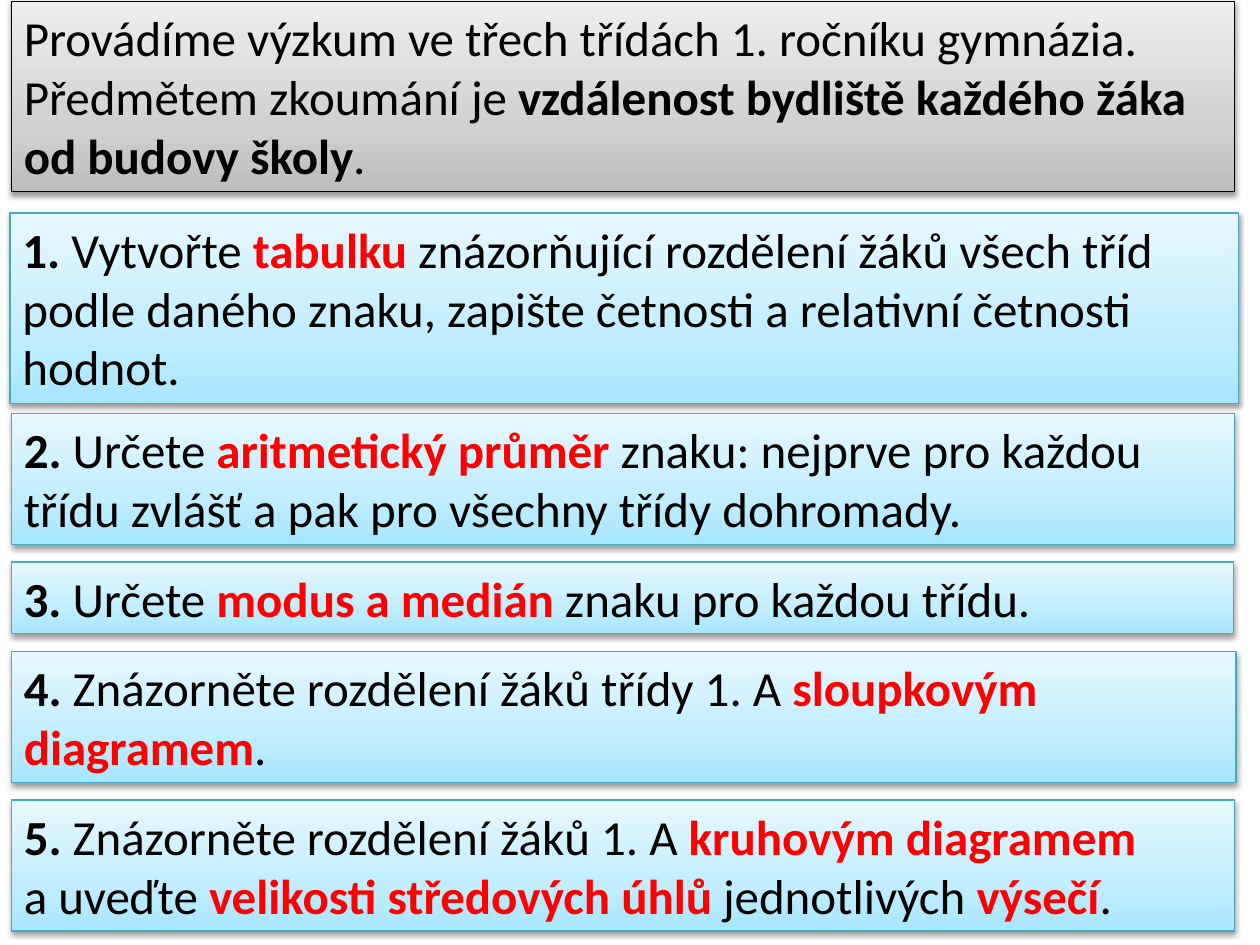
from dataclasses import dataclass

from lxml import etree
from pptx import Presentation
from pptx.dml.color import RGBColor
from pptx.enum.shapes import MSO_SHAPE
from pptx.enum.text import MSO_ANCHOR, MSO_AUTO_SIZE, PP_ALIGN
from pptx.oxml.ns import qn
from pptx.util import Inches, Pt

RECT = MSO_SHAPE.RECTANGLE
TOP = MSO_ANCHOR.TOP
LEFT = PP_ALIGN.LEFT
GROW = MSO_AUTO_SIZE.SHAPE_TO_FIT_TEXT

COLORS = {"text": "000000", "key": "FF0000", "gray_line": "000000",
          "blue_line": "46AAC5", "shadow": "000000"}
GRADIENTS = {
    "gray": {0: "BDBDBD", 35: "D1D1D1", 100: "EEEEEE"},
    "blue": {0: "A7E6FF", 35: "C1EDFF", 100: "E7F8FF"},
}
PLAIN, BOLD, KEY = "plain", "bold", "key"


@dataclass
class Panel:
    top: float
    height: float
    paragraphs: list
    left: float = 0.09
    width: float = 9.71
    theme: str = "blue"


PANELS = [
    Panel(0.01, 1.51, [
        [("Provádíme výzkum ve třech třídách 1. ročníku gymnázia.", PLAIN)],
        [("Předmětem zkoumání je ", PLAIN), ("vzdálenost bydliště každého žáka", BOLD)],
        [("od budovy školy", BOLD), (".", PLAIN)],
    ], theme="gray"),
    Panel(1.69, 1.51, [
        [("1. ", BOLD), ("Vytvořte ", PLAIN), ("tabulku", KEY),
         (" znázorňující rozdělení žáků všech tříd podle daného znaku, "
          "zapište četnosti a relativní četnosti", PLAIN)],
        [("hodnot.", PLAIN)],
    ], left=0.08, width=9.75),
    Panel(3.28, 1.04, [
        [("2. ", BOLD), ("Určete ", PLAIN), ("aritmetický průměr", KEY),
         (" znaku: nejprve pro každou", PLAIN)],
        [("třídu zvlášť a pak pro všechny třídy dohromady.", PLAIN)],
    ]),
    Panel(4.46, 0.57, [
        [("3. ", BOLD), ("Určete ", PLAIN), ("modus a medián", KEY),
         (" znaku pro každou třídu.", PLAIN)],
    ], width=9.7),
    Panel(5.17, 1.04, [
        [("4. ", BOLD), ("Znázorněte rozdělení žáků třídy 1. A ", PLAIN), ("sloupkovým", KEY)],
        [("diagramem", KEY), (".", PLAIN)],
    ], width=9.72),
    Panel(6.35, 1.04, [
        [("5. ", BOLD), ("Znázorněte rozdělení žáků 1. A ", PLAIN), ("kruhovým diagramem", KEY)],
        [("a uveďte ", PLAIN), ("velikosti středových úhlů ", KEY),
         ("jednotlivých ", PLAIN), ("výsečí", KEY), (".", PLAIN)],
    ]),
]


def add_color(parent, color: str):
    return etree.SubElement(parent, qn("a:srgbClr"), val=color)


def set_gradient(shape, stops: dict) -> None:
    shape.fill.gradient()
    grad = shape._element.spPr.find(qn("a:gradFill"))
    stop_list = grad.find(qn("a:gsLst"))
    for old in list(stop_list):
        stop_list.remove(old)
    for percent, color in stops.items():
        add_color(etree.SubElement(stop_list, qn("a:gs"), pos=str(percent * 1000)), color)
    grad.find(qn("a:lin")).set("ang", str(270 * 60000))


def set_shadow(shape) -> None:
    shape.shadow.inherit = False
    effects = shape._element.spPr.find(qn("a:effectLst"))
    shadow = etree.SubElement(effects, qn("a:outerShdw"), blurRad=str(Pt(3.1)),
                              dist=str(Pt(1.6)), dir=str(90 * 60000), rotWithShape="0")
    etree.SubElement(add_color(shadow, COLORS["shadow"]), qn("a:alpha"), val="38000")


def add_panel(slide, panel: Panel) -> None:
    s = slide.shapes.add_shape(RECT, Inches(panel.left), Inches(panel.top),
                               Inches(panel.width), Inches(panel.height))
    set_gradient(s, GRADIENTS[panel.theme])
    s.line.color.rgb = RGBColor.from_string(COLORS[f"{panel.theme}_line"])
    s.line.width = Pt(0.75)
    set_shadow(s)
    tf = s.text_frame
    tf.word_wrap = True
    tf.auto_size = GROW
    tf.vertical_anchor = TOP
    for i, runs in enumerate(panel.paragraphs):
        p = tf.add_paragraph() if i else tf.paragraphs[0]
        p.alignment = LEFT
        for text, style in runs:
            r = p.add_run()
            r.text = text
            r.font.name = "Calibri"
            r.font.size = Pt(28)
            r.font.bold = style != PLAIN
            r.font.color.rgb = RGBColor.from_string(COLORS["key" if style == KEY else "text"])


def main() -> None:
    prs = Presentation()
    prs.slide_width, prs.slide_height = Inches(10), Inches(7.5)
    slide = prs.slides.add_slide(prs.slide_layouts[6])
    for panel in PANELS:
        add_panel(slide, panel)
    prs.save("out.pptx")


if __name__ == "__main__":
    main()
